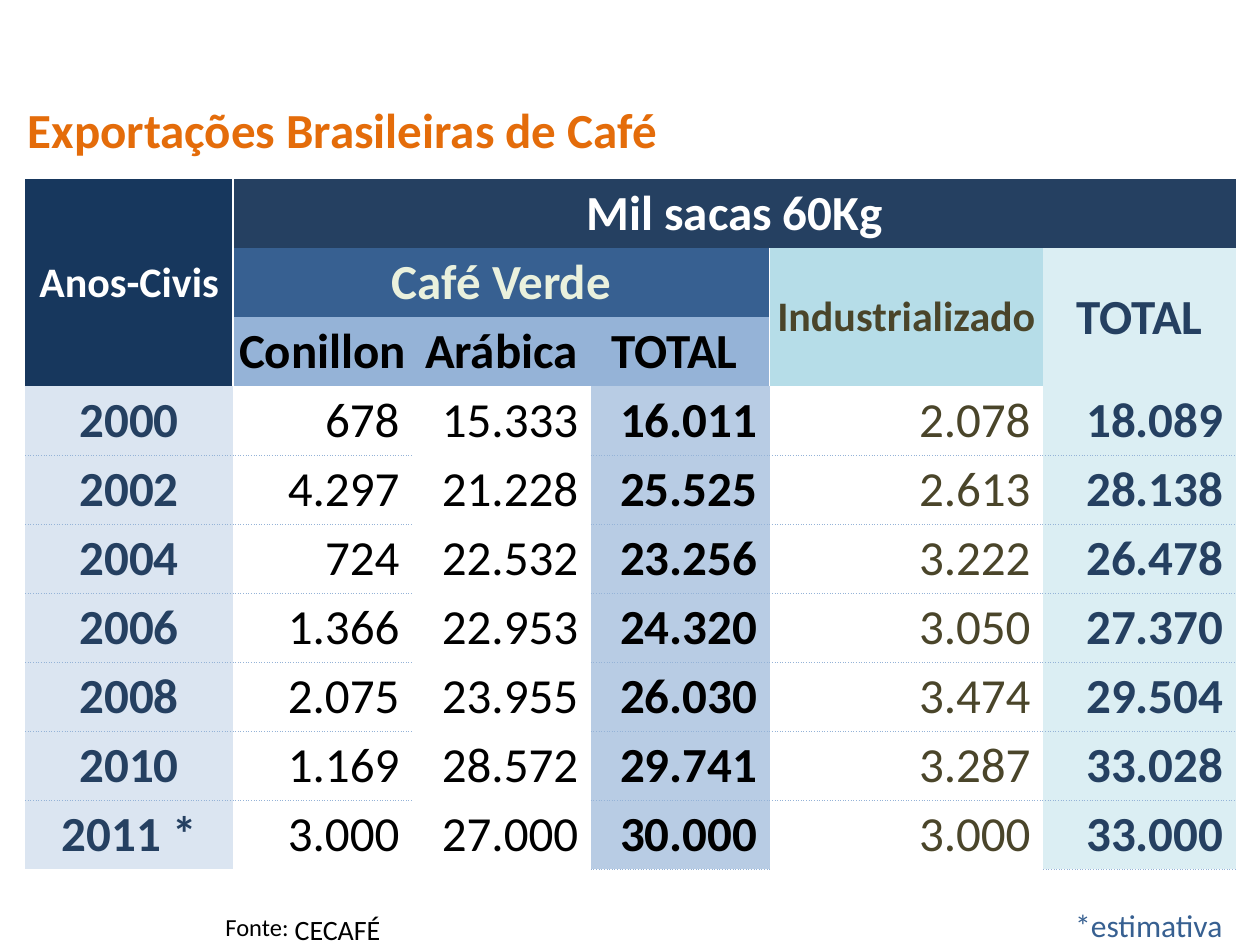
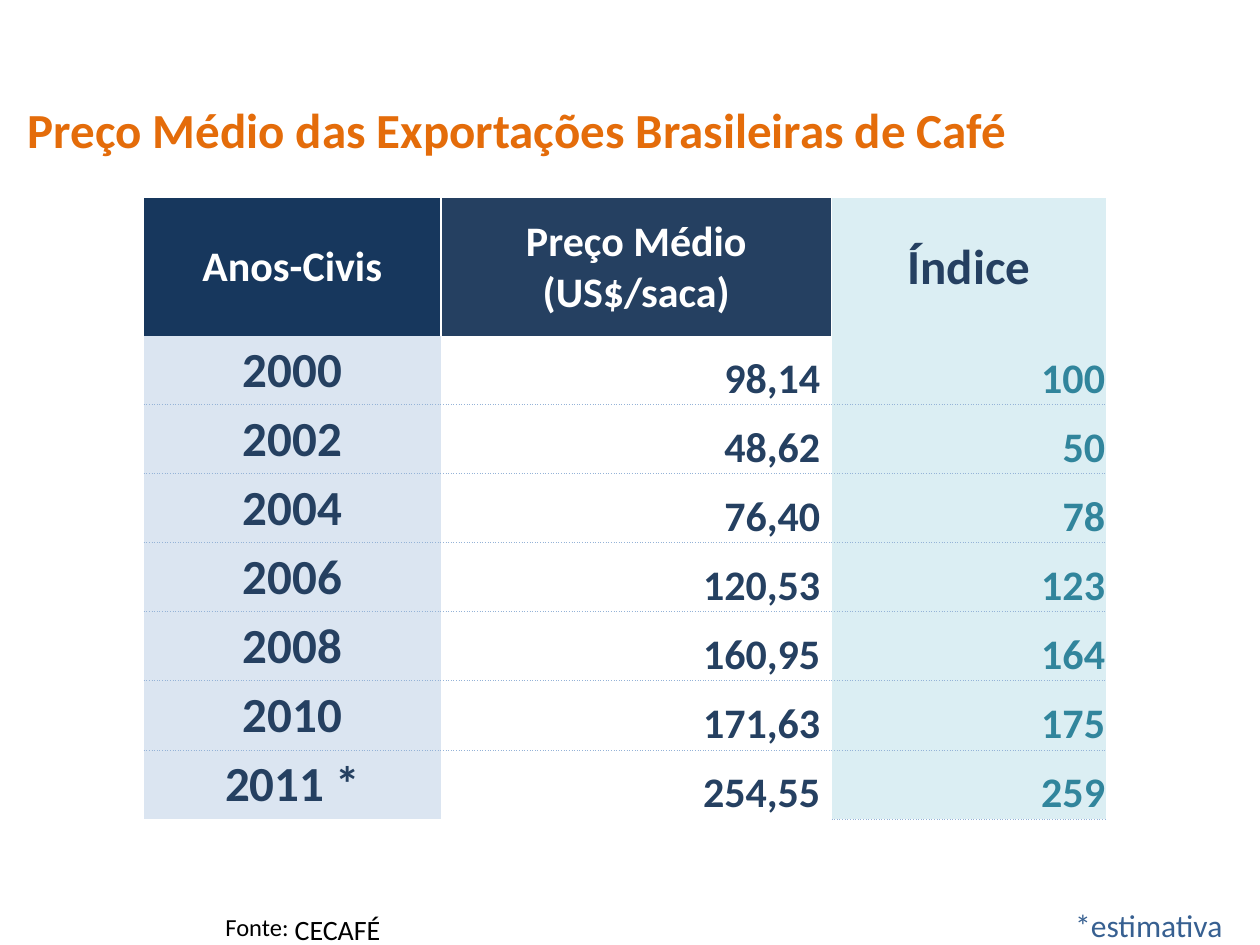
from pptx import Presentation
from pptx.dml.color import RGBColor
from pptx.enum.text import MSO_ANCHOR, MSO_AUTO_SIZE, PP_ALIGN
from pptx.util import Inches, Pt
from lxml.etree import SubElement
from pptx.oxml.ns import qn

FONT = "Calibri"
WHITE = RGBColor(0xFF, 0xFF, 0xFF)
BLACK = RGBColor(0, 0, 0)
ORANGE = RGBColor(0xE4, 0x6C, 0x0A)
NAVY = RGBColor(0x17, 0x37, 0x5D)
DARK = RGBColor(0x25, 0x40, 0x61)
BLUE = RGBColor(0x37, 0x60, 0x91)
SKY = RGBColor(0x95, 0xB3, 0xD7)
MIST = RGBColor(0xB8, 0xCC, 0xE4)
PALE = RGBColor(0xDB, 0xE5, 0xF1)
AQUA = RGBColor(0xB6, 0xDD, 0xE8)
ICE = RGBColor(0xDB, 0xEE, 0xF3)
TEAL = RGBColor(0x31, 0x85, 0x9C)
OLIVE = RGBColor(0x4A, 0x45, 0x2A)
LIME = RGBColor(0xEA, 0xF1, 0xDD)
NO_STYLE = "{2D5ABB26-0587-4C30-8999-92F81FD0307C}"
LEFT, MID, RIGHT = PP_ALIGN.LEFT, PP_ALIGN.CENTER, PP_ALIGN.RIGHT
CENTRE, BASE = MSO_ANCHOR.MIDDLE, MSO_ANCHOR.BOTTOM
ROW = 5.48 / 10  # height of one table row


def write(frame, words, size, ink, bold=False, align=LEFT):
    para = frame.paragraphs[0]
    para.alignment = align
    run = para.add_run()
    run.text = words
    font = run.font
    font.name, font.size, font.bold = FONT, Pt(size), bold
    font.color.rgb = ink


def fill_cell(cell, words, size, ink, bold, fill, lines="", align=MID,
              anchor=CENTRE, pad=0.01):
    cell.margin_left = cell.margin_top = Inches(0.01)
    cell.margin_right, cell.margin_bottom = Inches(pad), 0
    cell.vertical_anchor = anchor
    props = cell._tc.get_or_add_tcPr()
    for side in lines:  # sides come in the order L, R, T, B
        upright = side in "LR"
        line = SubElement(props, qn("a:ln" + side), w=str(Pt(1 if upright else 0.5)))
        paint = SubElement(line, qn("a:solidFill"))
        SubElement(paint, qn("a:srgbClr"), val=str(WHITE if upright else SKY))
        SubElement(line, qn("a:prstDash"), val="solid" if upright else "sysDot")
    if fill is not None:
        cell.fill.solid()
        cell.fill.fore_color.rgb = fill
    write(cell.text_frame, words, size, ink, bold, align)


years = ["2000", "2002", "2004", "2006", "2008", "2010", "2011 *"]

# Header cells: row, column, rows, columns, words, size, ink, fill, lines, right pad
# Body columns: values, size, ink, bold, fill, align, anchor, right pad, inner rules, end rule
year_col = (years, 28, DARK, True, PALE, MID, CENTRE, 0.01, True, False)
pages = [
    dict(
        title="Exportações Brasileiras de Café", wide=5.26,
        left=0.2, top=1.42, cols=[1.65, 1.42, 1.42, 1.42, 2.17, 1.53],
        rows=[ROW] * 10, first=3,
        heads=[
            (0, 0, 3, 1, "Anos-Civis", 24, WHITE, NAVY, "R", 0.01),
            (0, 1, 1, 5, "Mil sacas 60Kg", 28, WHITE, DARK, "L", 0.01),
            (1, 1, 1, 3, "Café Verde", 28, LIME, BLUE, "L", 0.01),
            (1, 4, 2, 1, "Industrializado", 24, OLIVE, AQUA, "", 0.01),
            (1, 5, 2, 1, "TOTAL", 28, DARK, ICE, "", 0.01),
            (2, 1, 1, 1, "Conillon", 28, BLACK, SKY, "", 0.01),
            (2, 2, 1, 1, "Arábica", 28, BLACK, SKY, "", 0.01),
            (2, 3, 1, 1, "TOTAL", 28, BLACK, SKY, "", 0.1),
        ],
        body=[
            year_col,
            (["678", "4.297", "724", "1.366", "2.075", "1.169", "3.000"],
             28, BLACK, False, None, RIGHT, CENTRE, 0.1, True, False),
            (["15.333", "21.228", "22.532", "22.953", "23.955", "28.572", "27.000"],
             28, BLACK, False, None, RIGHT, CENTRE, 0.1, False, False),
            (["16.011", "25.525", "23.256", "24.320", "26.030", "29.741", "30.000"],
             28, BLACK, True, MIST, RIGHT, CENTRE, 0.1, True, True),
            (["2.078", "2.613", "3.222", "3.050", "3.474", "3.287", "3.000"],
             28, OLIVE, False, None, RIGHT, CENTRE, 0.1, True, False),
            (["18.089", "28.138", "26.478", "27.370", "29.504", "33.028", "33.000"],
             28, DARK, True, ICE, RIGHT, CENTRE, 0.1, True, True),
        ],
    ),
    dict(
        title="Preço Médio das Exportações Brasileiras de Café", wide=8.06,
        left=1.14, top=1.57, cols=[2.36, 3.1, 2.18],
        rows=[2 * ROW] + [ROW] * 7, first=1,
        heads=[
            (0, 0, 1, 1, "Anos-Civis", 24, WHITE, NAVY, "R", 0.01),
            (0, 1, 1, 1, "Preço Médio (US$/saca)", 24, WHITE, DARK, "L", 0.01),
            (0, 2, 1, 1, "Índice", 28, DARK, ICE, "", 0.01),
        ],
        body=[
            year_col,
            (["98,14", "48,62", "76,40", "120,53", "160,95", "171,63", "254,55"],
             24, DARK, True, None, RIGHT, BASE, 0.09, True, False),
            (["100", "50", "78", "123", "164", "175", "259"],
             24, TEAL, True, ICE, RIGHT, BASE, 0.01, True, True),
        ],
    ),
]

# Footers: words, left, top, width, height, size, ink, align
notes = [
    ("Fonte:", 1.69, 7.19, 0.71, 0.34, 14, BLACK, LEFT),
    ("CECAFÉ", 2.24, 7.19, 0.89, 0.37, 16, BLACK, LEFT),
    ("*estimativa", 6.26, 7.14, 3.54, 0.4, 18, BLUE, RIGHT),
]

deck = Presentation()
deck.slide_width, deck.slide_height = Inches(10), Inches(7.5)

for page in pages:
    slide = deck.slides.add_slide(deck.slide_layouts[5])

    # Title
    title = slide.shapes.title
    title.left, title.top = Inches(0.12), Inches(0.74)
    title.width, title.height = Inches(page["wide"]), Inches(0.57)
    frame = title.text_frame
    frame.word_wrap, frame.auto_size = False, MSO_AUTO_SIZE.NONE
    frame.vertical_anchor = MSO_ANCHOR.TOP
    write(frame, page["title"], 28, ORANGE, True)

    # Footers
    for words, x, y, w, h, size, ink, align in notes:
        box = slide.shapes.add_textbox(Inches(x), Inches(y), Inches(w), Inches(h))
        box.text_frame.word_wrap = align == RIGHT
        write(box.text_frame, words, size, ink, align=align)

    # Table grid
    cols, rows, first = page["cols"], page["rows"], page["first"]
    table = slide.shapes.add_table(
        len(rows), len(cols), Inches(page["left"]), Inches(page["top"]),
        Inches(sum(cols)), Inches(sum(rows))).table
    table.first_row = table.horz_banding = False
    table._tbl.tblPr.find(qn("a:tableStyleId")).text = NO_STYLE
    for col, wide in zip(table.columns, cols):
        col.width = Inches(wide)
    for row, high in zip(table.rows, rows):
        row.height = Inches(high)

    # Table header
    for r, c, down, across, words, size, ink, fill, lines, pad in page["heads"]:
        cell = table.cell(r, c)
        if down * across > 1:
            cell.merge(table.cell(r + down - 1, c + across - 1))
        fill_cell(cell, words, size, ink, True, fill, lines, pad=pad)

    # Table body
    for c, col in enumerate(page["body"]):
        values, size, ink, bold, fill, align, anchor, pad, inner, end = col
        for i, value in enumerate(values):
            last = i == len(values) - 1
            lines = "T" if inner and i else ""
            lines += "B" if (end if last else inner) else ""
            fill_cell(table.cell(first + i, c), value, size, ink, bold, fill,
                      lines, align, anchor, pad)

deck.save("out.pptx")
